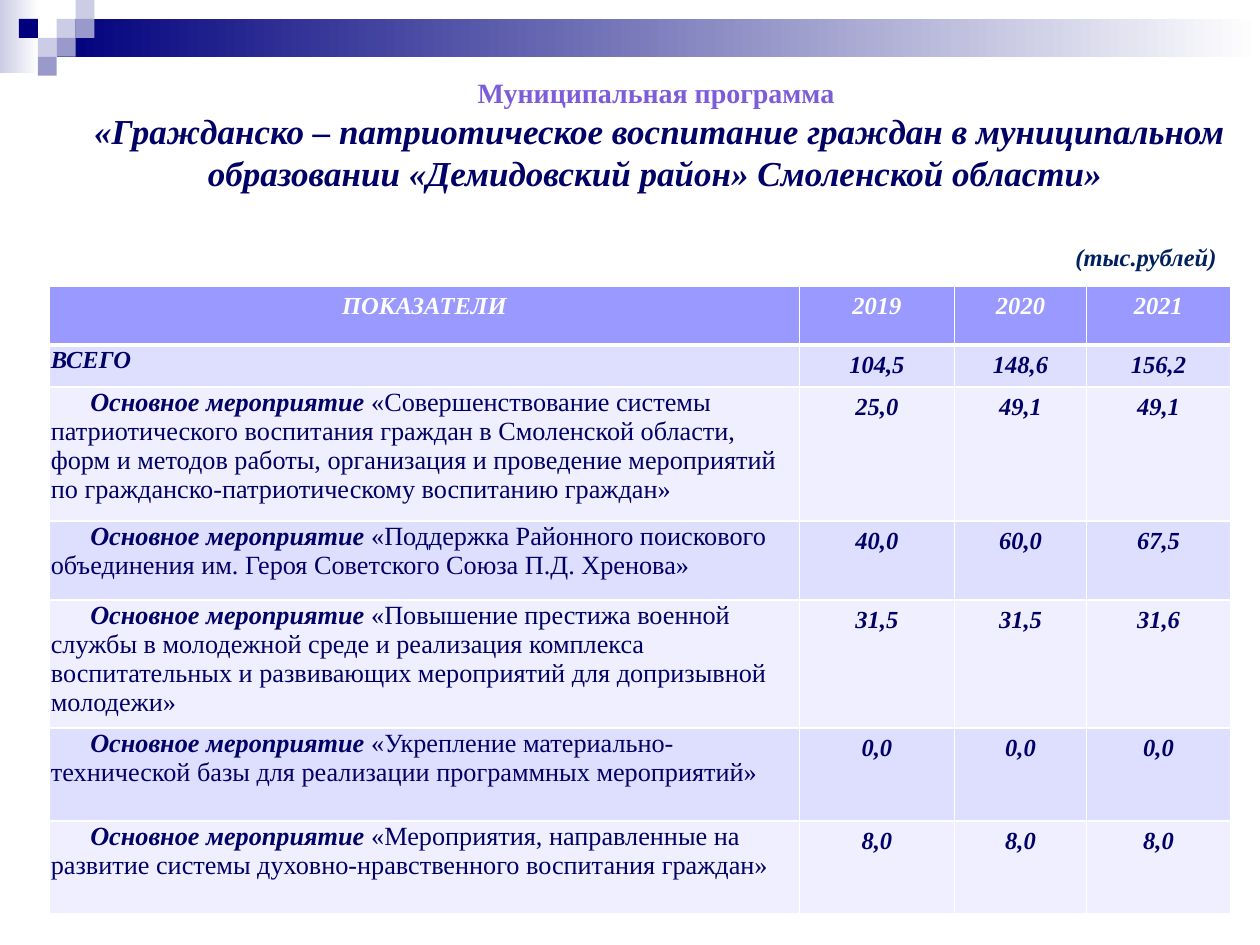
from lxml import etree
from pptx import Presentation
from pptx.dml.color import RGBColor
from pptx.enum.shapes import MSO_SHAPE
from pptx.enum.text import MSO_ANCHOR, MSO_AUTO_SIZE, PP_ALIGN
from pptx.oxml.ns import qn
from pptx.util import Pt

RECT = MSO_SHAPE.RECTANGLE
CENTER, LEFT = PP_ALIGN.CENTER, PP_ALIGN.LEFT
TOP = MSO_ANCHOR.TOP
NO_FIT = MSO_AUTO_SIZE.NONE
FONT = "Times New Roman"

WHITE = RGBColor(0xFF, 0xFF, 0xFF)
NAVY = RGBColor(0x00, 0x00, 0x7D)
PALE = RGBColor(0xCC, 0xCC, 0xE6)
LILAC = RGBColor(0x99, 0x99, 0xCC)
VIOLET = RGBColor(0x7D, 0x5C, 0xDA)
INK = RGBColor(0x00, 0x00, 0x66)
UNIT_BLUE = RGBColor(0x00, 0x20, 0x60)
HEADER = RGBColor(0x99, 0x99, 0xFF)
BANDS = (RGBColor(0xDE, 0xDE, 0xFF), RGBColor(0xEF, 0xEF, 0xFF))

STEP = 10.8  # side of one decorative square
SQUARES = [  # column, row, colour
    (3, 1, PALE), (4, 0, PALE), (4, 1, LILAC), (2, 2, PALE),
    (1, 1, NAVY), (3, 2, LILAC), (2, 3, LILAC),
]

COLUMNS = (428.4, 88.6, 75.6, 82.1)
ROWS = (33.8, 24, 76.6, 45.2, 73, 53.2, 53.2)
HEADINGS = ("ПОКАЗАТЕЛИ", "2019", "2020", "2021")
TOTAL = ("ВСЕГО", "104,5", "148,6", "156,2")
MEASURE = "Основное мероприятие "
MEASURES = [
    ("«Совершенствование системы патриотического воспитания граждан в "
     "Смоленской области, форм и методов работы, организация и проведение "
     "мероприятий по гражданско-патриотическому воспитанию граждан»",
     "25,0", "49,1", "49,1"),
    ("«Поддержка Районного поискового объединения им. Героя Советского "
     "Союза П.Д. Хренова»", "40,0", "60,0", "67,5"),
    ("«Повышение престижа военной службы в молодежной среде и реализация "
     "комплекса воспитательных и развивающих мероприятий для допризывной "
     "молодежи»", "31,5", "31,5", "31,6"),
    ("«Укрепление материально-технической базы для реализации программных "
     "мероприятий»", "0,0", "0,0", "0,0"),
    ("«Мероприятия, направленные на развитие системы духовно-нравственного "
     "воспитания граждан»", "8,0", "8,0", "8,0"),
]


def add_run(p, text, size, color, bold=True, italic=True):
    r = p.add_run()
    r.text = text
    formats = {"name": FONT, "size": Pt(size), "bold": bold, "italic": italic}
    for name, value in formats.items():
        setattr(r.font, name, value)
    r.font.color.rgb = color


def add_block(s, left, top, width, height, color, fade_to=None):
    sp = s.shapes.add_shape(RECT, Pt(left), Pt(top), Pt(width), Pt(height))
    sp.shadow.inherit = False
    sp.line.fill.background()
    if fade_to is None:
        sp.fill.solid()
        sp.fill.fore_color.rgb = color
    else:
        sp.fill.gradient()
        sp.fill.gradient_angle = 0
        for stop, stop_color in zip(sp.fill.gradient_stops, (color, fade_to)):
            stop.color.rgb = stop_color


def add_decoration(s):
    add_block(s, 0, 0, 22.3, 41.8, PALE, WHITE)
    add_block(s, 3 * STEP, STEP, 720 - 3 * STEP, 2 * STEP, NAVY, WHITE)
    for col, row, color in SQUARES:
        add_block(s, col * STEP, row * STEP, STEP, STEP, color)


def set_title(s):
    sp = s.shapes.title
    box = {"left": 33.8, "top": 39.6, "width": 686.2, "height": 74.9}
    for name, value in box.items():
        setattr(sp, name, Pt(value))
    tf = sp.text_frame
    tf.auto_size = NO_FIT
    tf.vertical_anchor = TOP
    p = tf.paragraphs[0]
    p.alignment = CENTER
    add_run(p, "Муниципальная программа ", 16, VIOLET, italic=False)
    p = tf.add_paragraph()
    p.alignment = CENTER
    add_run(p, "«Гражданско – патриотическое воспитание граждан в муниципальном "
               "образовании «Демидовский район» Смоленской области» ", 20, INK)


def set_borders(cell, **widths):
    tc_pr = cell._tc.get_or_add_tcPr()
    for side in "LRTB":
        ln = etree.SubElement(tc_pr, qn(f"a:ln{side}"), w=str(Pt(widths.get(side, 1))))
        fill = etree.SubElement(ln, qn("a:solidFill"))
        etree.SubElement(fill, qn("a:srgbClr"), val=str(WHITE))


def format_cell(cell, color, alignment, **border_widths):
    set_borders(cell, **border_widths)
    cell.fill.solid()
    cell.fill.fore_color.rgb = color
    cell.vertical_anchor = TOP
    p = cell.text_frame.paragraphs[0]
    p.alignment = alignment
    return p


def add_label_cell(cell, color, text, is_measure, **border_widths):
    p = format_cell(cell, color, LEFT, **border_widths)
    margins = {"margin_left": 0.7, "margin_right": 0.7,
               "margin_top": 0.7, "margin_bottom": 0}
    for name, value in margins.items():
        setattr(cell, name, Pt(value))
    if is_measure:
        p._p.get_or_add_pPr().set("indent", str(Pt(22.5)))
        add_run(p, MEASURE, 15, INK)
        add_run(p, text, 15, INK, bold=False, italic=False)
    else:
        add_run(p, text, 14, INK)


def add_program_table(s):
    frame = s.shapes.add_table(len(ROWS), len(COLUMNS), Pt(28.4), Pt(163.4),
                               Pt(sum(COLUMNS)), Pt(sum(ROWS)))
    table = frame.table
    for column, width in zip(table.columns, COLUMNS):
        column.width = Pt(width)
    for row, height in zip(table.rows, ROWS):
        row.height = Pt(height)

    # Header row
    for cell, text in zip(table.rows[0].cells, HEADINGS):
        add_run(format_cell(cell, HEADER, CENTER, B=3), text, 14, WHITE)

    # Total and measures, in alternating bands
    for i, (label, *values) in enumerate([TOTAL] + MEASURES):
        cells = list(table.rows[i + 1].cells)
        color = BANDS[i % 2]
        top = 3 if i == 0 else 1
        add_label_cell(cells[0], color, label, i > 0, T=top)
        for cell, value in zip(cells[1:], values):
            add_run(format_cell(cell, color, CENTER, T=top), value, 14, INK)


def add_unit_note(s):
    sp = s.shapes.add_textbox(Pt(607.5), Pt(134.6), Pt(95.8), Pt(24.5))
    tf = sp.text_frame
    tf.word_wrap = False
    add_run(tf.paragraphs[0], "(тыс.рублей)", 14, UNIT_BLUE)


def main():
    prs = Presentation()
    prs.slide_width, prs.slide_height = Pt(720), Pt(540)
    s = prs.slides.add_slide(prs.slide_layouts[5])
    add_decoration(s)
    set_title(s)
    add_program_table(s)
    add_unit_note(s)
    prs.save("out.pptx")


if __name__ == "__main__":
    main()
